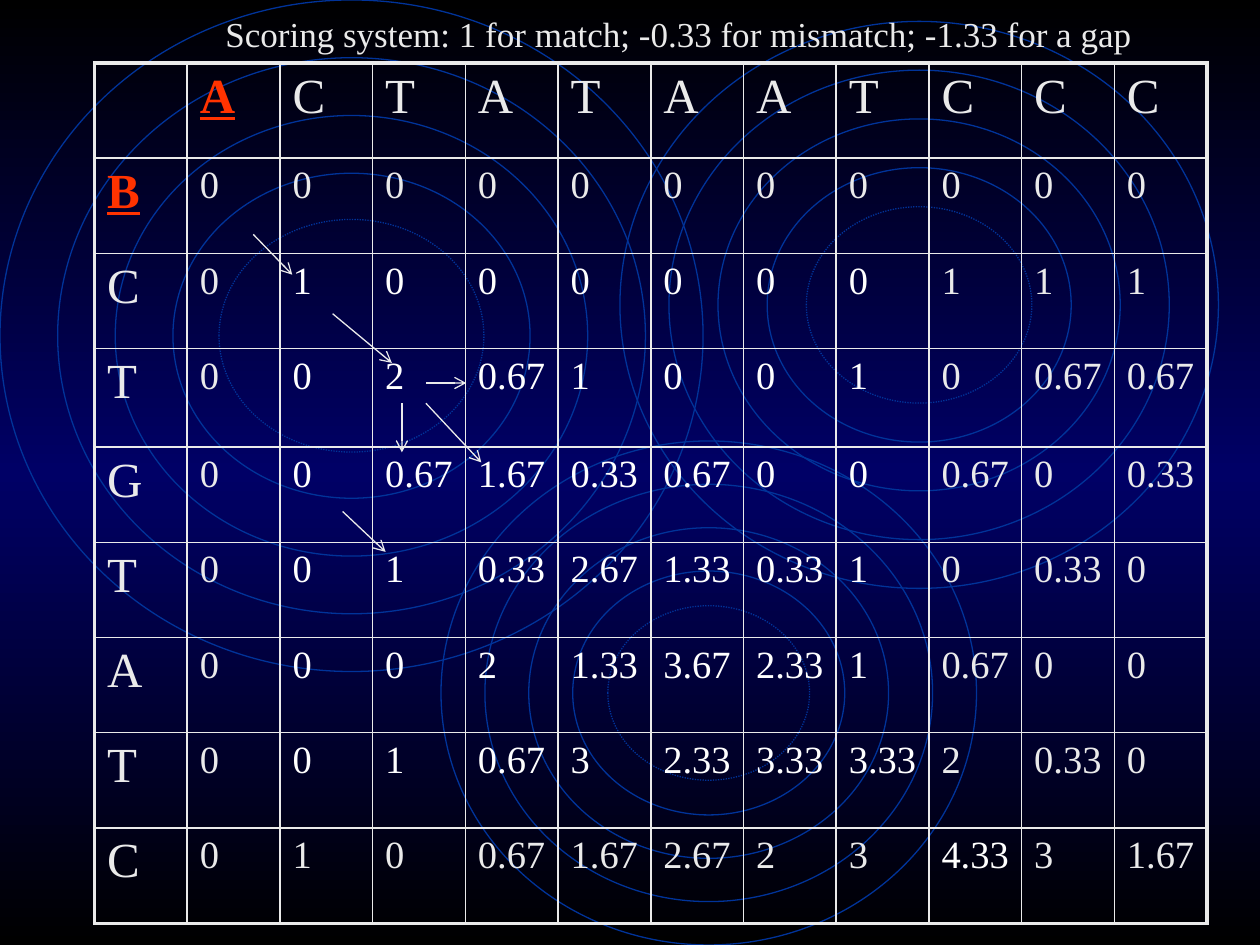
"""Build a sequence alignment scoring matrix slide."""
from copy import deepcopy
from typing import NamedTuple

from lxml.etree import SubElement
from pptx import Presentation
from pptx.dml.color import RGBColor
from pptx.enum.dml import MSO_LINE
from pptx.enum.shapes import MSO_CONNECTOR, MSO_SHAPE
from pptx.enum.text import MSO_AUTO_SIZE
from pptx.oxml.ns import qn
from pptx.slide import Slide
from pptx.table import _Cell
from pptx.text.text import _Paragraph
from pptx.util import Inches, Pt

COLORS = {
    "black": "000000",
    "navy": "000066",
    "ring": "003399",
    "light": "EAEAEA",
    "white": "FFFFFF",
    "accent": "FF3300",
}
FONT = "Times New Roman"
TITLE = "Scoring system: 1 for match; -0.33 for mismatch; -1.33 for a gap"
RING_STEPS = (0, 1, 2, 3, 3.8)
MATRIX = [
    line.split()
    for line in (
        "A C T A T A A T C C C",
        "B 0 0 0 0 0 0 0 0 0 0 0",
        "C 0 1 0 0 0 0 0 0 1 1 1",
        "T 0 0 2 0.67 1 0 0 1 0 0.67 0.67",
        "G 0 0 0.67 1.67 0.33 0.67 0 0 0.67 0 0.33",
        "T 0 0 1 0.33 2.67 1.33 0.33 1 0 0.33 0",
        "A 0 0 0 2 1.33 3.67 2.33 1 0.67 0 0",
        "T 0 0 1 0.67 3 2.33 3.33 3.33 2 0.33 0",
        "C 0 1 0 0.67 1.67 2.67 2 3 4.33 3 1.67",
    )
]
MATRIX[0].insert(0, "")


class Ripple(NamedTuple):
    """Outer bounds of a set of concentric rings, in inches."""

    left: float
    top: float
    width: float
    height: float


class Arrow(NamedTuple):
    """Start and end of a path arrow, in inches."""

    start_x: float
    start_y: float
    end_x: float
    end_y: float


RIPPLES = (
    Ripple(0, 0, 5.58, 5.33),
    Ripple(3.5, 3.5, 4.25, 4),
    Ripple(4.92, 0.17, 4.75, 4.5),
)
ARROWS = (
    Arrow(2.01, 1.86, 2.32, 2.18),
    Arrow(2.64, 2.49, 3.11, 2.88),
    Arrow(3.38, 3.04, 3.7, 3.04),
    Arrow(3.38, 3.2, 3.82, 3.67),
    Arrow(3.19, 3.2, 3.19, 3.59),
    Arrow(2.72, 4.06, 3.06, 4.38),
)


def color(name: str) -> RGBColor:
    """Look up a named colour."""
    return RGBColor.from_string(COLORS[name])


def paint_background(slide: Slide) -> None:
    """Fill the background with a black, navy, black gradient."""
    fill = slide.background.fill
    fill.gradient()
    fill.gradient_angle = 270
    for stop, name, position in zip(fill.gradient_stops, ("black", "navy"), (0, 0.5)):
        stop.color.rgb = color(name)
        stop.position = position
    stops = slide.background._cSld.find(".//" + qn("a:gsLst"))
    last_stop = deepcopy(stops[0])
    last_stop.set("pos", "100000")
    stops.append(last_stop)


def draw_ripple(slide: Slide, ripple: Ripple) -> None:
    """Draw concentric rings with a dotted innermost one."""
    group = slide.shapes.add_group_shape()
    for step in RING_STEPS:
        inset_x = ripple.width * step * 8.2 / 100
        inset_y = ripple.height * step * 8.6 / 100
        ring = group.shapes.add_shape(
            MSO_SHAPE.OVAL,
            Inches(ripple.left + inset_x),
            Inches(ripple.top + inset_y),
            Inches(ripple.width - 2 * inset_x),
            Inches(ripple.height - 2 * inset_y),
        )
        ring.shadow.inherit = False
        ring.fill.background()
        ring.line.color.rgb = color("ring")
        ring.line.width = Pt(0.75)
        if step == RING_STEPS[-1]:
            ring.line.dash_style = MSO_LINE.ROUND_DOT


def format_text(paragraph: _Paragraph, size: int, name: str) -> None:
    """Set the font of every run in a paragraph."""
    for run in paragraph.runs:
        run.font.name = FONT
        run.font.size = Pt(size)
        run.font.color.rgb = color(name)
        if name == "accent":
            run.font.bold = run.font.underline = True


def set_borders(cell: _Cell, outer_sides: dict[str, bool]) -> None:
    """Draw cell borders, thicker along the table's outer edge."""
    properties = cell._tc.get_or_add_tcPr()
    for index, (side, is_outer) in enumerate(outer_sides.items()):
        line = SubElement(properties, qn(f"a:ln{side}"), w=str(Pt(2.25 if is_outer else 1)))
        fill = SubElement(line, qn("a:solidFill"))
        SubElement(fill, qn("a:srgbClr"), val=COLORS["light"])
        properties.insert(index, line)


def text_color(row: int, column: int, value: str) -> str:
    """Choose the colour name for a matrix cell."""
    if value and (row, column) in ((0, 1), (1, 0)):
        return "accent"
    in_core = 2 <= row <= 7 and 2 <= column <= 8
    return "white" if in_core or value == "4.33" else "light"


def draw_matrix(slide: Slide) -> None:
    """Draw the scoring matrix as a table."""
    row_count, column_count = len(MATRIX), len(MATRIX[0])
    table = slide.shapes.add_table(
        row_count, column_count, Inches(0.75), Inches(0.5), Inches(8.83), Inches(6.83)
    ).table
    table.first_row = table.horz_banding = False
    for column in table.columns:
        column.width = Inches(8.83 / column_count)
    for index, row in enumerate(table.rows):
        row.height = Inches(0.78 if index == 3 else 6.05 / (row_count - 1))
    for row, values in enumerate(MATRIX):
        for column, value in enumerate(values):
            cell = table.cell(row, column)
            cell.fill.background()
            set_borders(cell, {
                "L": column == 0,
                "R": column == column_count - 1,
                "T": row == 0,
                "B": row == row_count - 1,
            })
            cell.text_frame.text = value
            paragraph = cell.text_frame.paragraphs[0]
            spacing = SubElement(paragraph._p.get_or_add_pPr(), qn("a:spcBef"))
            SubElement(spacing, qn("a:spcPct"), val="20000")
            size = 28 if row == 0 or column == 0 else 22
            format_text(paragraph, size, text_color(row, column, value))


def draw_arrow(slide: Slide, arrow: Arrow) -> None:
    """Draw a thin line with an open arrowhead at its end."""
    connector = slide.shapes.add_connector(MSO_CONNECTOR.STRAIGHT, *map(Inches, arrow))
    connector.line.color.rgb = color("light")
    connector.line.width = Pt(0.75)
    SubElement(connector.line._get_or_add_ln(), qn("a:tailEnd"), type="arrow")
    SubElement(connector._element.spPr, qn("a:effectLst"))


def draw_title(slide: Slide) -> None:
    """Write the scoring rule above the matrix."""
    text_frame = slide.shapes.add_textbox(
        Inches(1.69), Inches(0.05), Inches(7.61), Inches(0.44)
    ).text_frame
    text_frame.word_wrap = True
    text_frame.auto_size = MSO_AUTO_SIZE.SHAPE_TO_FIT_TEXT
    text_frame.text = TITLE
    format_text(text_frame.paragraphs[0], 20, "light")


def main() -> None:
    """Build and save the presentation."""
    presentation = Presentation()
    presentation.slide_width = Inches(10)
    presentation.slide_height = Inches(7.5)
    slide = presentation.slides.add_slide(presentation.slide_layouts[6])
    paint_background(slide)
    for ripple in RIPPLES:
        draw_ripple(slide, ripple)
    draw_matrix(slide)
    for arrow in ARROWS:
        draw_arrow(slide, arrow)
    draw_title(slide)
    presentation.save("out.pptx")


if __name__ == "__main__":
    main()
